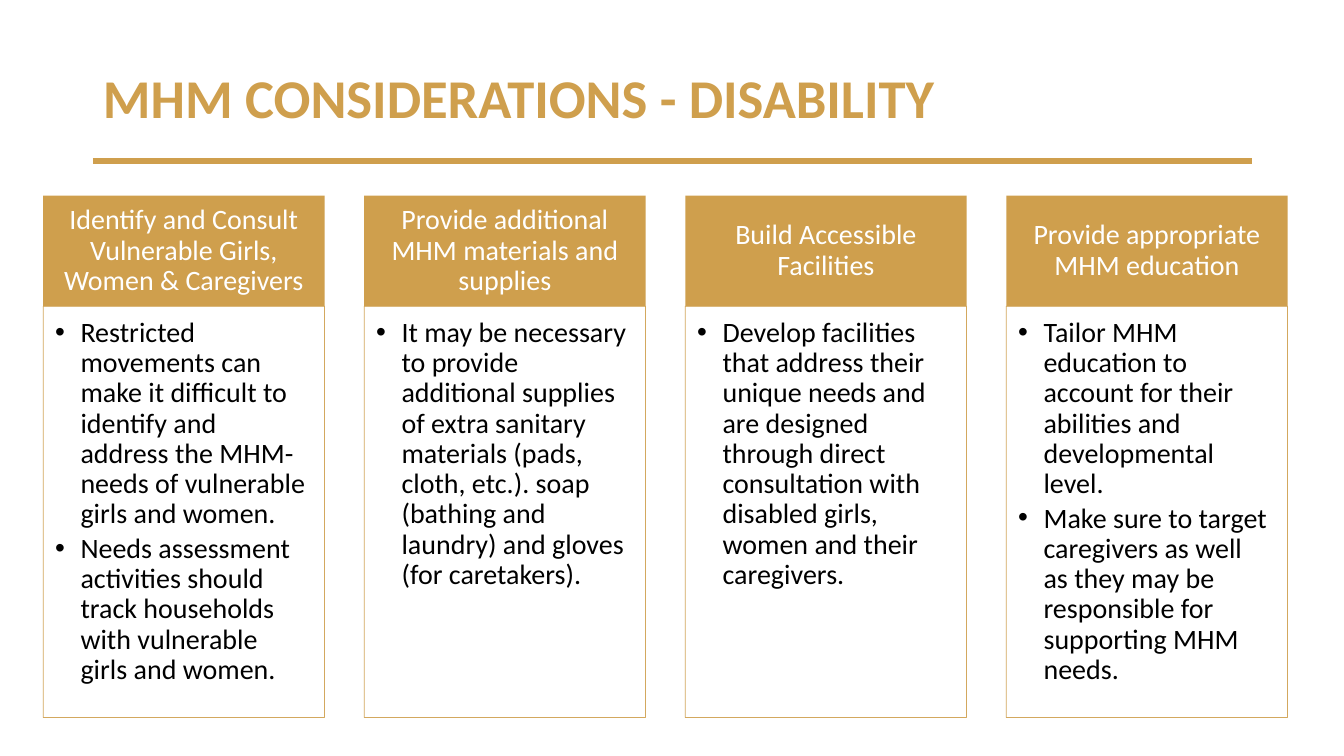
"""Build the slide on menstrual hygiene considerations for disability."""
from lxml import etree
from pptx import Presentation
from pptx.dml.color import RGBColor
from pptx.enum import shapes, text
from pptx.oxml import ns
from pptx.util import Cm, Pt

HEADING = "MHM CONSIDERATIONS - DISABILITY"
CONSIDERATIONS = [
    ("Identify and Consult Vulnerable Girls, Women & Caregivers",
     ["Restricted movements can make it difficult to identify and address "
      "the MHM-needs of vulnerable girls and women.",
      "Needs assessment activities should track households with vulnerable "
      "girls and women."]),
    ("Provide additional MHM materials and supplies",
     ["It may be necessary to provide additional supplies of extra sanitary "
      "materials (pads, cloth, etc.). soap (bathing and laundry) and gloves "
      "(for caretakers)."]),
    ("Build Accessible Facilities",
     ["Develop facilities that address their unique needs and are designed "
      "through direct consultation with disabled girls, women and their "
      "caregivers."]),
    ("Provide appropriate MHM education",
     ["Tailor MHM education to account for their abilities and "
      "developmental level.",
      "Make sure to target caregivers as well as they may be responsible for "
      "supporting MHM needs."]),
]

GOLD, WHITE, BLACK = "CF9F4D", "FFFFFF", "000000"
LEFT, TOP, PITCH, WIDTH = 1.09, 4.93, 8.09, 7.09
HEADER_HEIGHT, BODY_HEIGHT = 2.79, 10.36
RULE_LEFT, RULE_RIGHT, RULE_Y = 2.34, 31.55, 4.06

TITLE_FRAME = dict(word_wrap=True, auto_size=text.MSO_AUTO_SIZE.NONE,
                   vertical_anchor=text.MSO_ANCHOR.MIDDLE)
HEADER_FRAME = dict(word_wrap=True, vertical_anchor=text.MSO_ANCHOR.MIDDLE,
                    margin_left=Cm(0.4), margin_right=Cm(0.4),
                    margin_top=Cm(0.23), margin_bottom=Cm(0.23))
BODY_FRAME = dict(word_wrap=True, vertical_anchor=text.MSO_ANCHOR.TOP,
                  margin_left=Cm(0.3), margin_right=Cm(0.4),
                  margin_top=Cm(0.3), margin_bottom=Cm(0.43))
TITLE_LINE = dict(alignment=text.PP_ALIGN.LEFT, line_spacing=0.9)
HEADER_LINE = dict(alignment=text.PP_ALIGN.CENTER, line_spacing=0.9)
BODY_LINE = dict(alignment=text.PP_ALIGN.LEFT, line_spacing=0.9,
                 space_after=Pt(3), level=1)


def rgb(value):
    return RGBColor.from_string(value)


def apply(target, values):
    for name, value in values.items():
        setattr(target, name, value)


def add_bullet(paragraph):
    properties = paragraph._p.get_or_add_pPr()
    properties.set("marL", str(Cm(0.64)))
    properties.set("indent", str(-Cm(0.64)))
    etree.SubElement(properties, ns.qn("a:buFont")).set("typeface", "Arial")
    etree.SubElement(properties, ns.qn("a:buChar")).set("char", "•")


def write(frame, lines, frame_format, line_format, size, color,
          bold=False, bulleted=False):
    apply(frame, frame_format)
    for index, line in enumerate(lines):
        paragraph = frame.add_paragraph() if index else frame.paragraphs[0]
        if bulleted:
            add_bullet(paragraph)
        apply(paragraph, line_format)
        run = paragraph.add_run()
        run.text = line
        apply(run.font, dict(name="Calibri", size=Pt(size), bold=bold))
        run.font.color.rgb = rgb(color)


def add_panel(slide, left, top, height):
    panel = slide.shapes.add_shape(shapes.MSO_SHAPE.RECTANGLE, Cm(left),
                                   Cm(top), Cm(WIDTH), Cm(height))
    panel.shadow.inherit = False
    return panel


def add_heading(slide):
    heading = slide.shapes.title
    apply(heading, dict(left=Cm(RULE_LEFT), top=Cm(1.02),
                        width=Cm(23.06), height=Cm(3.05)))
    write(heading.text_frame, [HEADING], TITLE_FRAME, TITLE_LINE, 39, GOLD,
          bold=True)
    rule = slide.shapes.add_connector(
        shapes.MSO_CONNECTOR.STRAIGHT, Cm(RULE_LEFT), Cm(RULE_Y),
        Cm(RULE_RIGHT), Cm(RULE_Y))
    rule.line.color.rgb = rgb(GOLD)
    rule.line.width = Pt(4.5)
    etree.SubElement(rule._element.spPr, ns.qn("a:effectLst"))


def add_column(slide, left, topic, points):
    header = add_panel(slide, left, TOP, HEADER_HEIGHT)
    header.fill.solid()
    header.fill.fore_color.rgb = rgb(GOLD)
    header.line.fill.background()
    write(header.text_frame, [topic], HEADER_FRAME, HEADER_LINE, 20, WHITE)

    body = add_panel(slide, left, TOP + HEADER_HEIGHT, BODY_HEIGHT)
    body.fill.background()
    body.line.color.rgb = rgb(GOLD)
    body.line.width = Pt(0.5)
    outline = body.line._ln.find(".//" + ns.qn("a:srgbClr"))
    etree.SubElement(outline, ns.qn("a:alpha")).set("val", "90000")
    write(body.text_frame, points, BODY_FRAME, BODY_LINE, 20, BLACK,
          bulleted=True)


def main():
    deck = Presentation()
    apply(deck, dict(slide_width=Cm(33.87), slide_height=Cm(19.05)))
    slide = deck.slides.add_slide(deck.slide_layouts[5])
    add_heading(slide)
    for index, (topic, points) in enumerate(CONSIDERATIONS):
        add_column(slide, LEFT + index * PITCH, topic, points)
    deck.save("out.pptx")


if __name__ == "__main__":
    main()
